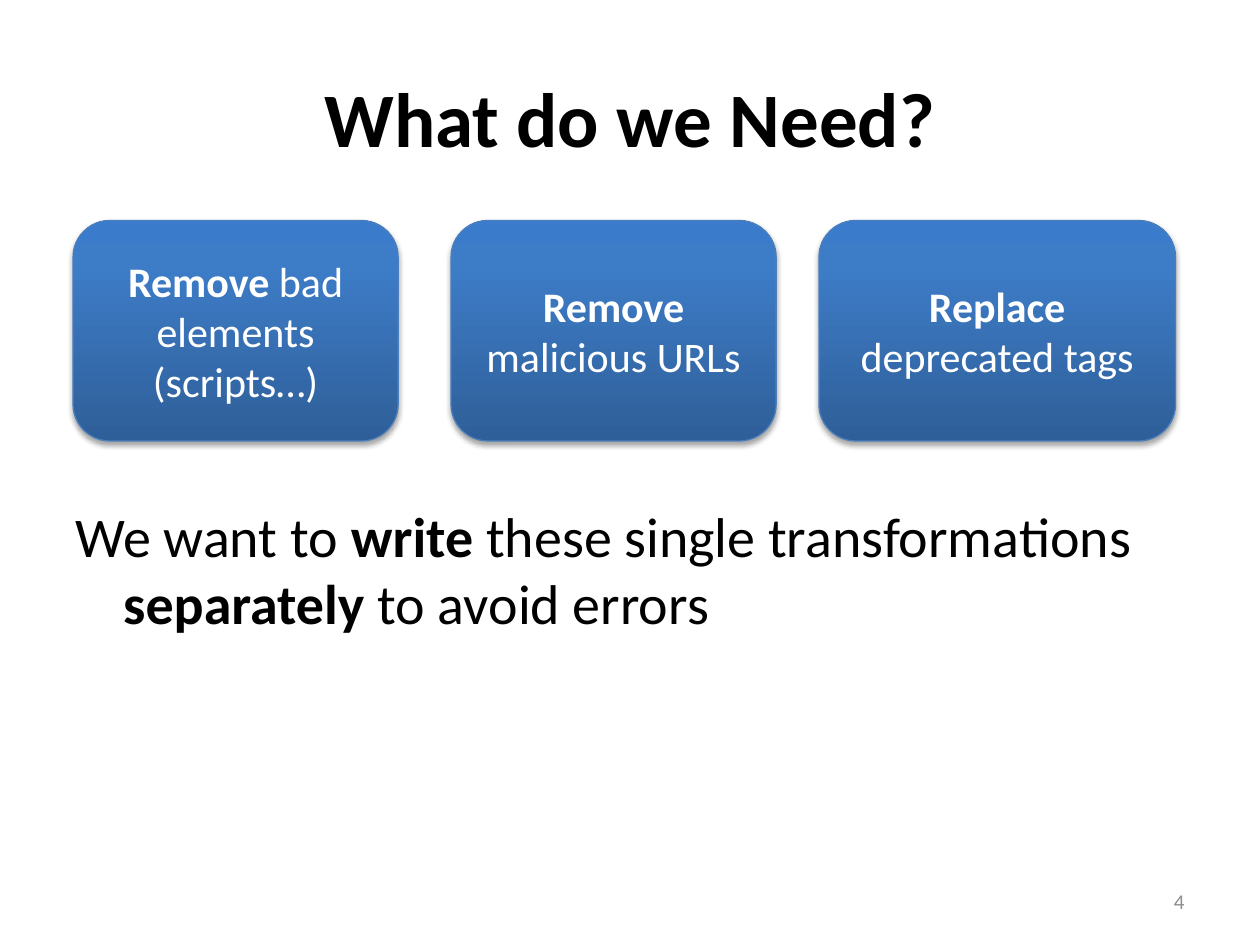
from dataclasses import dataclass

from lxml import etree
from pptx import Presentation
from pptx.dml.color import RGBColor
from pptx.enum.shapes import MSO_SHAPE
from pptx.enum.text import MSO_ANCHOR, PP_ALIGN
from pptx.util import Inches, Pt

ROUND_RECT = MSO_SHAPE.ROUNDED_RECTANGLE
TOP, MIDDLE = MSO_ANCHOR.TOP, MSO_ANCHOR.MIDDLE
LEFT, CENTER, RIGHT = PP_ALIGN.LEFT, PP_ALIGN.CENTER, PP_ALIGN.RIGHT
NS = "http://schemas.openxmlformats.org/drawingml/2006/main"
FONT = "Calibri"
COLORS = {
    "text": "000000", "number": "8C8C8C", "card_text": "FFFFFF", "line": "4B7EBC",
    "dark": "2F5F99", "mid": "3D7CC7", "light": "3A7CCB", "shadow": "000000",
}
GRADIENT = {"dark": 0, "mid": 80, "light": 100}
CARD_TOP, CARD_HEIGHT = 1.75, 1.75
HANGING = 0.38


@dataclass
class Run:
    text: str
    bold: bool = False


@dataclass
class TextStyle:
    size: int
    color: str
    align: PP_ALIGN
    anchor: MSO_ANCHOR = MIDDLE


@dataclass
class TextBox:
    left: float
    top: float
    width: float
    height: float
    runs: list[Run]
    style: TextStyle
    hanging: float = 0


@dataclass
class Card:
    left: float
    width: float
    verb: str
    target: str


CARD_STYLE = TextStyle(24, "card_text", CENTER)
CARDS = [
    Card(0.58, 2.58, "Remove ", "bad elements (scripts…)"),
    Card(3.58, 2.58, "Remove ", "malicious URLs"),
    Card(6.5, 2.83, "Replace ", "deprecated tags"),
]
TEXT_BOXES = [
    TextBox(0.5, 0.3, 9, 1.25, [Run("What do we Need?", True)],
            TextStyle(44, "text", CENTER)),
    TextBox(0.5, 3.93, 9, 2.77,
            [Run("We want to "), Run("write", True), Run(" these single transformations "),
             Run("separately", True), Run(" to avoid errors")],
            TextStyle(32, "text", LEFT, TOP), HANGING),
    TextBox(7.17, 6.95, 2.33, 0.4, [Run("4")], TextStyle(12, "number", RIGHT)),
]


def rgb(name: str) -> RGBColor:
    """Return a named colour."""
    return RGBColor.from_string(COLORS[name])


def write_text(sp, runs: list[Run], style: TextStyle):
    """Fill a shape with one styled paragraph and return it."""
    tf = sp.text_frame
    tf.word_wrap = True
    tf.vertical_anchor = style.anchor
    p = tf.paragraphs[0]
    p.alignment = style.align
    for run in runs:
        r = p.add_run()
        r.text = run.text
        fmt = {"name": FONT, "size": Pt(style.size), "bold": run.bold}
        for key, value in fmt.items():
            setattr(r.font, key, value)
        r.font.color.rgb = rgb(style.color)
    return p


def add_text_box(s, box: TextBox) -> None:
    """Add a text box, with a hanging indent if it has one."""
    sp = s.shapes.add_textbox(*map(Inches, (box.left, box.top, box.width, box.height)))
    p = write_text(sp, box.runs, box.style)
    if box.hanging:
        pPr = p._p.get_or_add_pPr()
        pPr.set("marL", str(Inches(box.hanging)))
        pPr.set("indent", str(-Inches(box.hanging)))


def gradient_fill() -> etree._Element:
    """Return the vertical gradient of a card."""
    stops = "".join(
        f'<a:gs pos="{pos * 1000}"><a:srgbClr val="{COLORS[name]}"/></a:gs>'
        for name, pos in GRADIENT.items()
    )
    return etree.fromstring(
        f'<a:gradFill xmlns:a="{NS}" rotWithShape="1"><a:gsLst>{stops}</a:gsLst>'
        '<a:lin ang="16200000" scaled="0"/></a:gradFill>'
    )


def drop_shadow() -> etree._Element:
    """Return the soft shadow below a card."""
    return etree.fromstring(
        f'<a:effectLst xmlns:a="{NS}"><a:outerShdw blurRad="{Pt(3.1)}" dist="{Pt(1.8)}" '
        f'dir="5400000" rotWithShape="0"><a:srgbClr val="{COLORS["shadow"]}">'
        '<a:alpha val="35000"/></a:srgbClr></a:outerShdw></a:effectLst>'
    )


def add_card(s, card: Card) -> None:
    """Add a rounded card with a bold verb and its target."""
    sp = s.shapes.add_shape(
        ROUND_RECT, *map(Inches, (card.left, CARD_TOP, card.width, CARD_HEIGHT))
    )
    spPr = sp._element.spPr
    spPr.append(gradient_fill())
    sp.line.color.rgb = rgb("line")
    sp.line.width = Pt(0.75)
    spPr.append(drop_shadow())
    write_text(sp, [Run(card.verb, True), Run(card.target)], CARD_STYLE)


def main() -> None:
    """Build the slide and save it."""
    prs = Presentation()
    prs.slide_width, prs.slide_height = Inches(10), Inches(7.5)
    s = prs.slides.add_slide(prs.slide_layouts[6])
    for box in TEXT_BOXES:
        add_text_box(s, box)
    for card in CARDS:
        add_card(s, card)
    prs.save("out.pptx")


if __name__ == "__main__":
    main()
